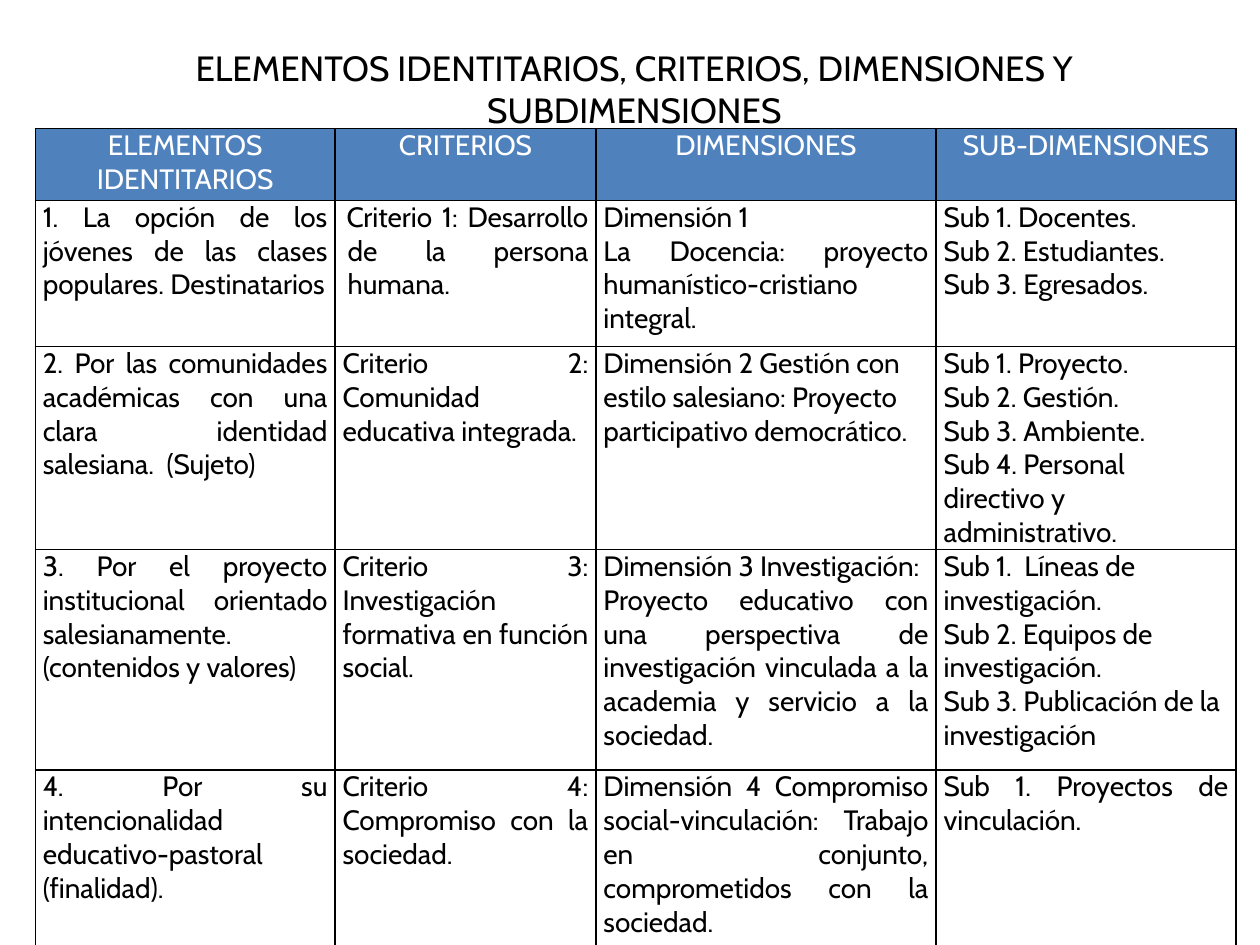
from lxml import etree
from pptx import Presentation
from pptx.dml.color import RGBColor
from pptx.enum.text import MSO_AUTO_SIZE, PP_ALIGN
from pptx.oxml.ns import qn
from pptx.util import Inches, Pt

CENTER, JUSTIFY, LEFT = PP_ALIGN.CENTER, PP_ALIGN.JUSTIFY, PP_ALIGN.LEFT
COLORS = {"text": "000000", "header": "4F81BD", "header_text": "FFFFFF", "border": "000000"}
FONT = "Cabin"
TITLE = "ELEMENTOS IDENTITARIOS, CRITERIOS, DIMENSIONES Y SUBDIMENSIONES"
COLUMN_WIDTHS = [2.38, 2.07, 2.7, 2.38]
ROW_HEIGHTS = [0.57, 1.16, 1.11, 1.75, 1.45]
LEFT_CELLS = {(1, 3), (2, 2), (2, 3), (3, 3)}
INDENTED_CELL = (1, 1)
ROWS = [
    [
        ["ELEMENTOS IDENTITARIOS"],
        ["CRITERIOS"],
        ["DIMENSIONES"],
        ["SUB-DIMENSIONES"],
    ],
    [
        ["1. La opción de los jóvenes de las clases populares. Destinatarios"],
        ["Criterio 1: Desarrollo de la persona humana."],
        ["Dimensión 1", "La Docencia: proyecto humanístico-cristiano integral."],
        ["Sub 1. Docentes.", "Sub 2. Estudiantes.", "Sub 3. Egresados."],
    ],
    [
        ["2. Por las comunidades académicas con una clara identidad salesiana.  (Sujeto)"],
        ["Criterio 2: Comunidad educativa integrada."],
        ["Dimensión 2 Gestión con estilo salesiano: Proyecto participativo democrático."],
        ["Sub 1. Proyecto.", "Sub 2. Gestión.", "Sub 3. Ambiente.",
         "Sub 4. Personal directivo y administrativo."],
    ],
    [
        ["3. Por el proyecto institucional orientado salesianamente. (contenidos y valores)"],
        ["Criterio 3: Investigación formativa en función social."],
        ["Dimensión 3 Investigación:",
         "Proyecto educativo con una perspectiva de investigación vinculada a la academia "
         "y servicio a la sociedad."],
        ["Sub 1.  Líneas de investigación.", "Sub 2. Equipos de investigación.",
         "Sub 3. Publicación de la investigación"],
    ],
    [
        ["4. Por su intencionalidad educativo-pastoral (finalidad)."],
        ["Criterio 4: Compromiso con la sociedad."],
        ["Dimensión 4 Compromiso social-vinculación: Trabajo en conjunto, "
         "comprometidos con la sociedad."],
        ["Sub 1. Proyectos de vinculación."],
    ],
]


def write_text(text_frame, lines, size, color, alignment):
    text_frame.text = "\n".join(lines)
    for paragraph in text_frame.paragraphs:
        paragraph.alignment = alignment
        paragraph.font.name = FONT
        paragraph.font.size = Pt(size)
        paragraph.font.color.rgb = RGBColor.from_string(COLORS[color])


def add_borders(cell):
    properties = cell._tc.get_or_add_tcPr()
    for index, side in enumerate(("lnL", "lnR", "lnT", "lnB")):
        line = etree.Element(qn(f"a:{side}"), w=str(Pt(1)))
        fill = etree.SubElement(line, qn("a:solidFill"))
        etree.SubElement(fill, qn("a:srgbClr"), val=COLORS["border"])
        properties.insert(index, line)


def format_cell(cell, lines, position):
    is_header = position[0] == 0
    cell.margin_left = cell.margin_right = Inches(0.06)
    cell.margin_top = cell.margin_bottom = 0
    if is_header:
        cell.fill.solid()
        cell.fill.fore_color.rgb = RGBColor.from_string(COLORS["header"])
        write_text(cell.text_frame, lines, 16, "header_text", CENTER)
    else:
        cell.fill.background()
        alignment = LEFT if position in LEFT_CELLS else JUSTIFY
        write_text(cell.text_frame, lines, 16, "text", alignment)
    if position == INDENTED_CELL:
        properties = cell.text_frame.paragraphs[0]._p.get_or_add_pPr()
        properties.set("marL", str(Inches(0.04)))
        properties.set("indent", str(Inches(-0.01)))
    add_borders(cell)


def add_criteria_table(slide, left, top, width, height):
    shape = slide.shapes.add_table(
        len(ROWS), len(COLUMN_WIDTHS), Inches(left), Inches(top), Inches(width), Inches(height))
    table = shape.table
    table.horz_banding = False
    table.first_row = False
    for column, column_width in zip(table.columns, COLUMN_WIDTHS):
        column.width = Inches(column_width)
    for row, row_height in zip(table.rows, ROW_HEIGHTS):
        row.height = Inches(row_height)
    for row_index, row in enumerate(ROWS):
        for column_index, lines in enumerate(row):
            format_cell(table.cell(row_index, column_index), lines, (row_index, column_index))


def add_title(slide, left, top, width, height):
    shape = slide.shapes.add_textbox(Inches(left), Inches(top), Inches(width), Inches(height))
    shape.text_frame.word_wrap = True
    shape.text_frame.auto_size = MSO_AUTO_SIZE.SHAPE_TO_FIT_TEXT
    write_text(shape.text_frame, [TITLE], 20, "text", CENTER)


def main():
    presentation = Presentation()
    presentation.slide_width = Inches(10)
    presentation.slide_height = Inches(7.5)
    slide = presentation.slides.add_slide(presentation.slide_layouts[6])
    add_criteria_table(slide, 0.28, 1.02, sum(COLUMN_WIDTHS), sum(ROW_HEIGHTS))
    add_title(slide, 0.43, 0.32, 9.21, 0.44)
    presentation.save("out.pptx")


if __name__ == "__main__":
    main()
